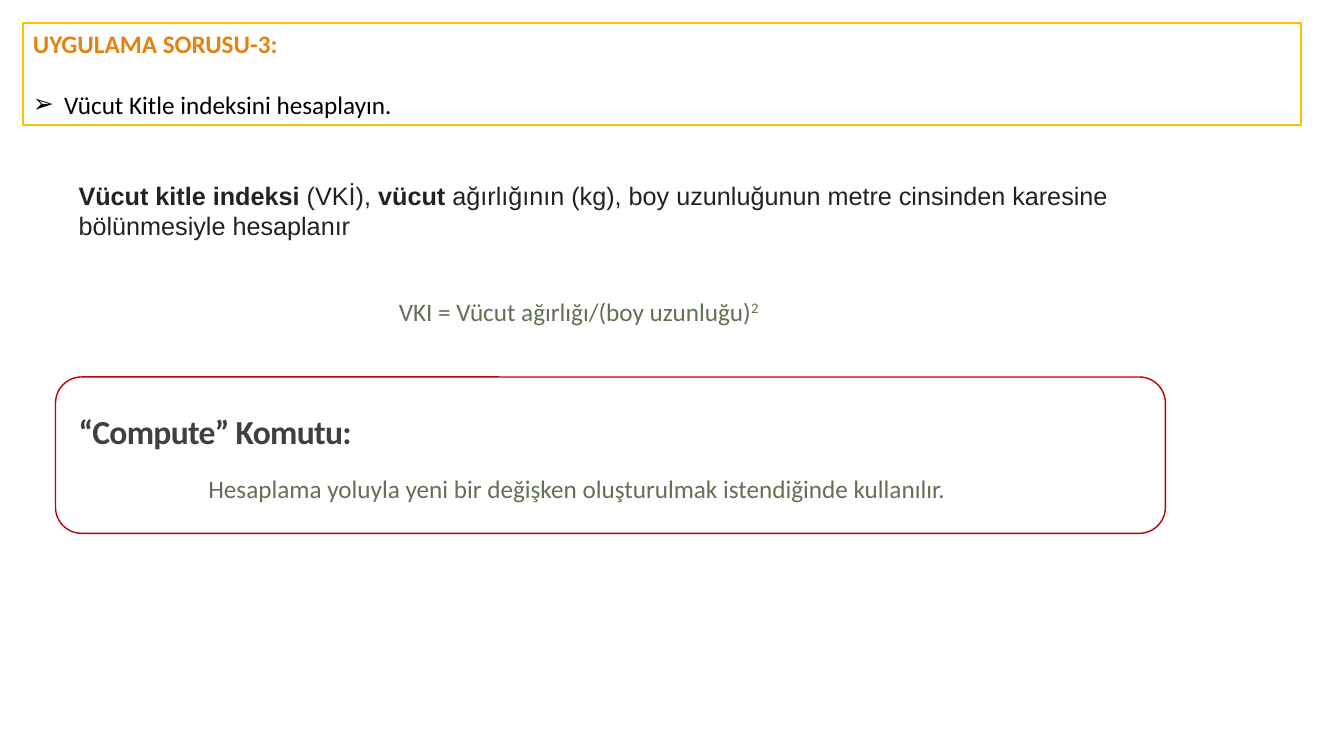
from dataclasses import dataclass

from lxml import etree
from pptx import Presentation
from pptx.dml.color import RGBColor
from pptx.enum.shapes import MSO_SHAPE
from pptx.enum.text import MSO_ANCHOR, PP_ALIGN
from pptx.oxml.ns import qn
from pptx.shapes.autoshape import Shape
from pptx.slide import Slide
from pptx.util import Cm, Pt

RECTANGLE, ROUNDED = MSO_SHAPE.RECTANGLE, MSO_SHAPE.ROUNDED_RECTANGLE
TOP, BOTTOM = MSO_ANCHOR.TOP, MSO_ANCHOR.BOTTOM
JUSTIFY = PP_ALIGN.JUSTIFY

ORANGE, GOLD, RED = "E48312", "FFC000", "C00000"
OLIVE, DARK_GREY, NEAR_BLACK = "637052", "404040", "222222"
BLACK, WHITE = "000000", "FFFFFF"


@dataclass(frozen=True)
class Box:
    """Position and size in centimetres."""
    left: float
    top: float
    width: float
    height: float

    def lengths(self) -> tuple[Cm, Cm, Cm, Cm]:
        return Cm(self.left), Cm(self.top), Cm(self.width), Cm(self.height)


@dataclass(frozen=True)
class Piece:
    text: str
    color: str
    bold: bool = False
    size: int = 18
    font: str = "Calibri"
    superscript: bool = False
    spacing: float = 0


@dataclass(frozen=True)
class Caption:
    box: Box
    pieces: list[Piece]
    anchor: MSO_ANCHOR = TOP
    line_spacing: float = 1.0


CAPTIONS = [
    Caption(Box(5, 11.79, 22.5, 1.02), [
        Piece("Hesaplama yoluyla yeni bir değişken oluşturulmak istendiğinde kullanılır.", OLIVE)]),
    Caption(Box(1.73, 10.26, 10.77, 1.24), [
        Piece("“Compute” Komutu:", DARK_GREY, True, 24, spacing=-0.5)], BOTTOM, 0.85),
    Caption(Box(1.73, 4.42, 27.28, 1.8), [
        Piece("Vücut kitle indeksi", NEAR_BLACK, True, font="Arial"),
        Piece(" (VKİ), ", NEAR_BLACK, font="Arial"),
        Piece("vücut", NEAR_BLACK, True, font="Arial"),
        Piece(" ağırlığının (kg), boy uzunluğunun metre cinsinden karesine bölünmesiyle hesaplanır",
              NEAR_BLACK, font="Arial")]),
    Caption(Box(9.8, 7.34, 11.46, 1.02), [
        Piece("VKI = Vücut ağırlığı/(boy uzunluğu)", OLIVE),
        Piece("2", OLIVE, superscript=True)]),
]


def rgb(value: str) -> RGBColor:
    return RGBColor.from_string(value)


def add_piece(paragraph, piece: Piece) -> None:
    run = paragraph.add_run()
    run.text = piece.text
    run.font.name = piece.font
    run.font.size = Pt(piece.size)
    run.font.bold = piece.bold
    run.font.color.rgb = rgb(piece.color)
    properties = run._r.get_or_add_rPr()
    if piece.superscript:
        properties.set("baseline", "30000")
    if piece.spacing:
        properties.set("spc", str(round(piece.spacing * 100)))


def add_arrow_bullet(paragraph, indent: Cm) -> None:
    properties = paragraph._p.get_or_add_pPr()
    properties.set("marL", str(indent))
    properties.set("indent", str(-indent))
    etree.SubElement(properties, qn("a:buFont")).set("typeface", "Arial")
    etree.SubElement(properties, qn("a:buChar")).set("char", "➢")


def add_frame(slide: Slide, kind: MSO_SHAPE, box: Box, line: str) -> Shape:
    frame = slide.shapes.add_shape(kind, *box.lengths())
    frame.shadow.inherit = False
    frame.fill.background()
    frame.line.color.rgb = rgb(line)
    frame.line.width = Pt(1)
    return frame


def add_question(slide: Slide) -> None:
    question = add_frame(slide, RECTANGLE, Box(0.58, 0.58, 32.21, 2.57), GOLD)
    question.fill.solid()
    question.fill.fore_color.rgb = rgb(WHITE)
    content = question.text_frame
    content.word_wrap = True
    content.vertical_anchor = TOP
    heading, task = content.paragraphs[0], content.add_paragraph()
    heading.alignment = task.alignment = JUSTIFY
    task.space_before = Pt(22)
    add_arrow_bullet(task, Cm(0.79))
    add_piece(heading, Piece("UYGULAMA SORUSU-3:", ORANGE, True))
    add_piece(task, Piece("Vücut Kitle indeksini hesaplayın.", BLACK))


def add_caption(slide: Slide, caption: Caption) -> None:
    content = slide.shapes.add_textbox(*caption.box.lengths()).text_frame
    content.word_wrap = True
    content.vertical_anchor = caption.anchor
    paragraph = content.paragraphs[0]
    paragraph.line_spacing = caption.line_spacing
    for piece in caption.pieces:
        add_piece(paragraph, piece)


def main() -> None:
    presentation = Presentation()
    presentation.slide_width, presentation.slide_height = Cm(33.87), Cm(19.05)
    slide = presentation.slides.add_slide(presentation.slide_layouts[6])
    add_question(slide)
    for caption in CAPTIONS:
        add_caption(slide, caption)
    add_frame(slide, ROUNDED, Box(1.4, 9.5, 27.97, 3.94), RED)
    presentation.save("out.pptx")


if __name__ == "__main__":
    main()
